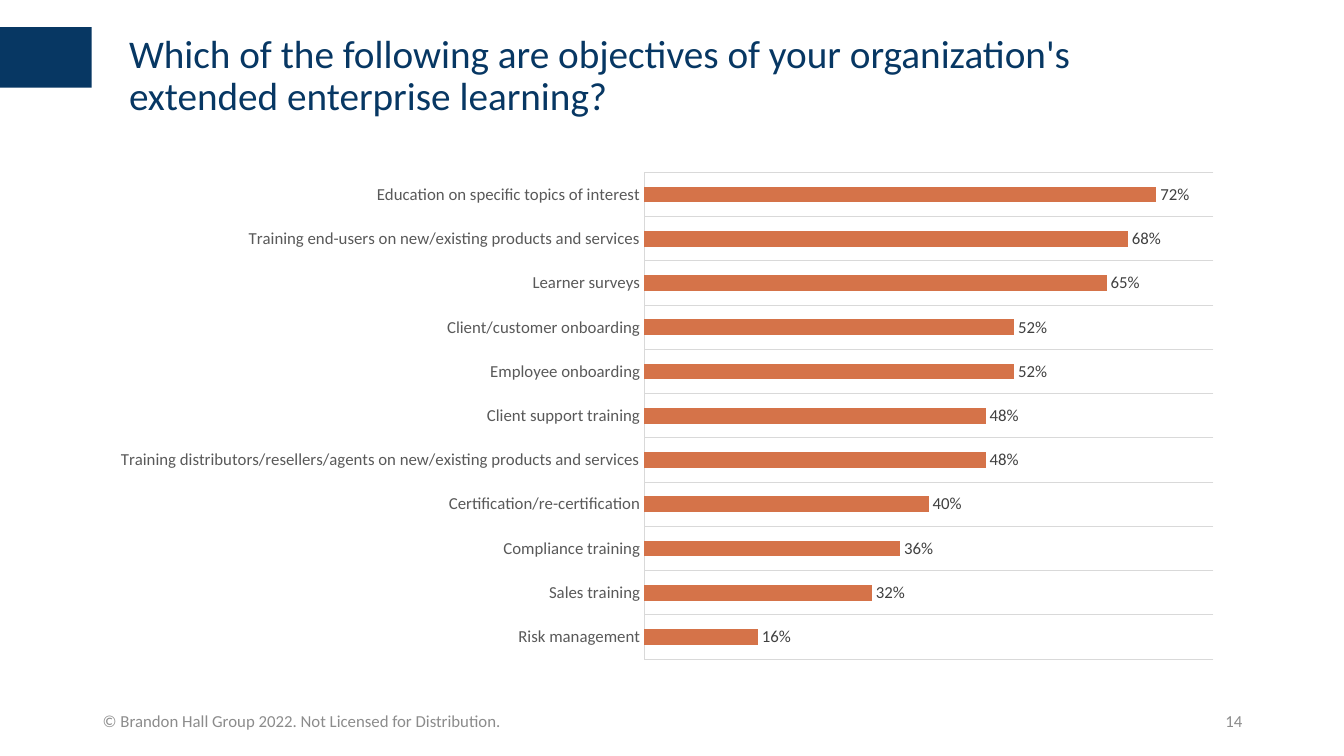
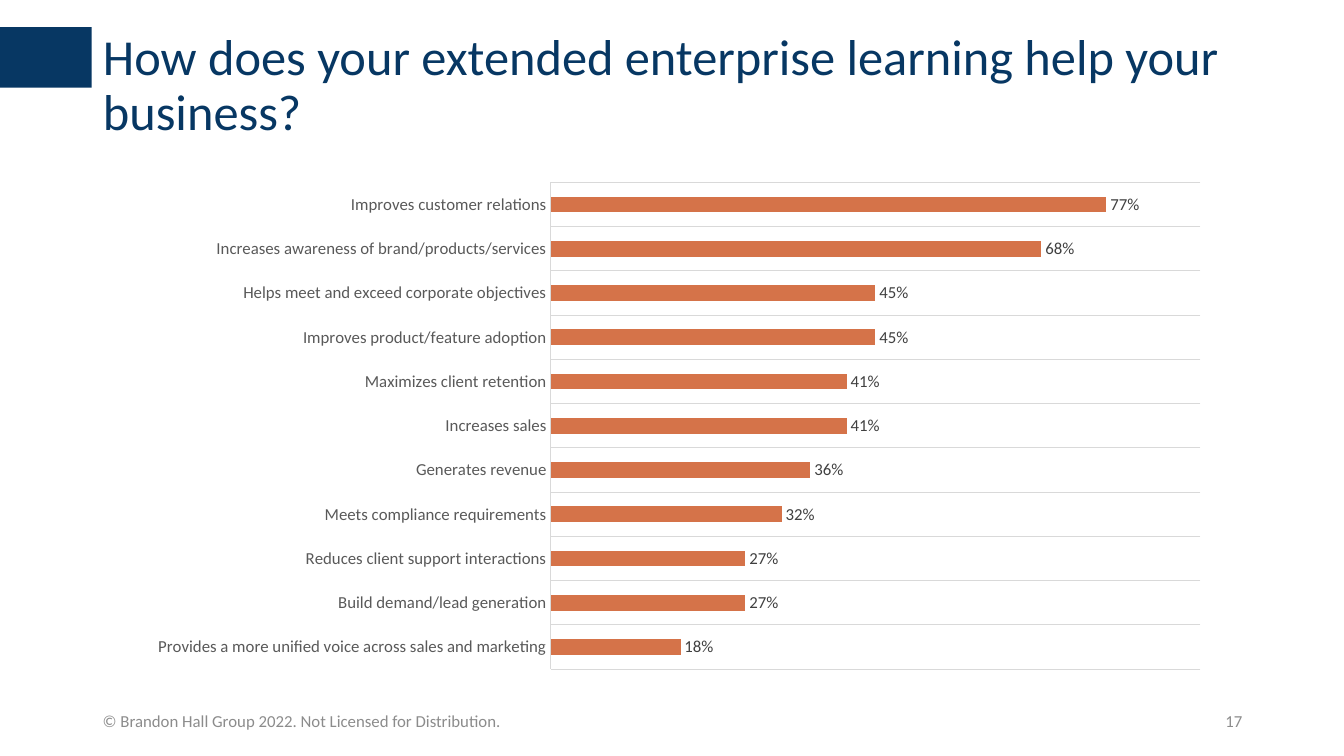
from lxml import etree
from pptx import Presentation
from pptx import util as u
from pptx.chart.data import CategoryChartData
from pptx.dml.color import RGBColor
from pptx.enum import chart as charts, shapes, text

FONT = "Calibri"
NAVY, ORANGE, GRID = "073763", "D57349", "D9D9D9"
FOOTER_GREY, AXIS_GREY, LABEL_GREY = "8C8C8C", "595959", "404040"
COPYRIGHT = "© Brandon Hall Group 2022. Not Licensed for Distribution."
CHART_NS = "http://schemas.openxmlformats.org/drawingml/2006/chart"

# Each slide: number, title, chart and plot area; answers run from the bottom bar up
SURVEYS = [
    dict(
        number=14,
        title="Which of the following are objectives of your organization's "
              "extended enterprise learning?",
        title_size=28,
        title_box=(1.18, 0.29, 10.01, 1.07),
        chart_box=(0.97, 1.61, 11.29, 5.03),
        plot=(0.48, 0.02, 0.5, 0.96),
        axis_max=0.8,
        answers=[
            ("Risk management", 0.16),
            ("Sales training", 0.32),
            ("Compliance training", 0.36),
            ("Certification/re-certification", 0.40),
            ("Training distributors/resellers/agents on new/existing "
             "products and services", 0.48),
            ("Client support training", 0.48),
            ("Employee onboarding", 0.52),
            ("Client/customer onboarding", 0.52),
            ("Learner surveys", 0.65),
            ("Training end-users on new/existing products and services", 0.68),
            ("Education on specific topics of interest", 0.72),
        ],
    ),
    dict(
        number=17,
        title="How does your extended enterprise learning help your business?",
        title_size=36,
        title_box=(0.92, 0.27, 11.5, 1.58),
        chart_box=(1.38, 1.71, 10.74, 5.03),
        plot=(0.38, 0.02, 0.6, 0.96),
        axis_max=0.9,
        answers=[
            ("Provides a more unified voice across sales and marketing", 0.18),
            ("Build demand/lead generation", 0.27),
            ("Reduces client support interactions", 0.27),
            ("Meets compliance requirements", 0.32),
            ("Generates revenue", 0.36),
            ("Increases sales", 0.41),
            ("Maximizes client retention", 0.41),
            ("Improves product/feature adoption", 0.45),
            ("Helps meet and exceed corporate objectives", 0.45),
            ("Increases awareness of brand/products/services", 0.68),
            ("Improves customer relations", 0.77),
        ],
    ),
]


def color(value):
    return RGBColor.from_string(value)


def inches(box):
    return [u.Inches(length) for length in box]


def style_font(font, size, value):
    font.name = FONT
    font.size = u.Pt(size)
    font.color.rgb = color(value)


def style_line(line):
    line.color.rgb = color(GRID)
    line.width = u.Pt(0.75)


def write(shape, words, size, value, align, anchor):
    """Fill a text shape with one styled paragraph."""
    frame = shape.text_frame
    frame.word_wrap = True
    frame.auto_size = text.MSO_AUTO_SIZE.NONE
    frame.vertical_anchor = anchor
    para = frame.paragraphs[0]
    para.alignment = align
    span = para.add_run()
    span.text = words
    style_font(span.font, size, value)
    return para


def add_band(page, box):
    band = page.shapes.add_shape(shapes.MSO_SHAPE.RECTANGLE, *inches(box))
    band.shadow.inherit = False
    band.fill.solid()
    band.fill.fore_color.rgb = color(NAVY)
    band.line.fill.background()


def add_title(page, box, words, size):
    title = page.shapes.title
    title.left, title.top, title.width, title.height = inches(box)
    para = write(title, words, size, NAVY,
                 text.PP_ALIGN.LEFT, text.MSO_ANCHOR.TOP)
    para.line_spacing = 0.9


def add_footer(page, box, number):
    """Copyright at the left end of the box, page number at the right."""
    left, top, width, height = box
    parts = [
        (left, 4.5, COPYRIGHT, text.PP_ALIGN.LEFT),
        (left + width - 3, 3, str(number), text.PP_ALIGN.RIGHT),
    ]
    for part_left, part_width, words, align in parts:
        part = page.shapes.add_textbox(
            *inches((part_left, top, part_width, height)))
        write(part, words, 12, FOOTER_GREY, align, text.MSO_ANCHOR.MIDDLE)


def set_plot_area(chart, plot):
    """Place the inner plot area as fractions of the chart."""
    area = chart.element.find(f".//{{{CHART_NS}}}plotArea")
    for old in area.findall(f"{{{CHART_NS}}}layout"):
        area.remove(old)
    layout = etree.Element(f"{{{CHART_NS}}}layout")
    manual = etree.SubElement(layout, f"{{{CHART_NS}}}manualLayout")
    settings = [("layoutTarget", "inner"), ("xMode", "edge"), ("yMode", "edge")]
    settings += zip("xywh", plot)
    for name, value in settings:
        etree.SubElement(manual, f"{{{CHART_NS}}}{name}").set("val", str(value))
    area.insert(0, layout)


def add_bar_chart(page, box, plot, axis_max, answers):
    data = CategoryChartData(number_format="0%")
    data.categories = [answer for answer, share in answers]
    data.add_series("Series 1", [share for answer, share in answers])
    chart = page.shapes.add_chart(
        charts.XL_CHART_TYPE.BAR_CLUSTERED, *inches(box), data).chart
    chart.has_legend = False
    chart.has_title = False
    style_font(chart.font, 10, "000000")
    set_plot_area(chart, plot)

    # Axes
    names = chart.category_axis
    names.major_tick_mark = charts.XL_TICK_MARK.NONE
    names.minor_tick_mark = charts.XL_TICK_MARK.NONE
    names.has_major_gridlines = True
    style_line(names.major_gridlines.format.line)
    style_line(names.format.line)
    style_font(names.tick_labels.font, 12, AXIS_GREY)
    shares = chart.value_axis
    shares.minimum_scale, shares.maximum_scale = 0, axis_max
    shares.has_major_gridlines = False
    shares.visible = False

    # Bars and their labels
    bars = chart.plots[0]
    bars.gap_width = 182
    bars.vary_by_categories = False
    fill = bars.series[0].format.fill
    fill.solid()
    fill.fore_color.rgb = color(ORANGE)
    bars.has_data_labels = True
    labels = bars.data_labels
    labels.show_value = True
    labels.number_format = "0%"
    labels.number_format_is_linked = False
    labels.position = charts.XL_LABEL_POSITION.OUTSIDE_END
    style_font(labels.font, 12, LABEL_GREY)


def add_survey_slide(deck, survey):
    page = deck.slides.add_slide(deck.slide_layouts[5])
    add_band(page, (0, 0.27, 0.91, 0.6))
    add_footer(page, (0.92, 6.95, 11.5, 0.4), survey["number"])
    add_title(page, survey["title_box"], survey["title"], survey["title_size"])
    add_bar_chart(page, survey["chart_box"], survey["plot"],
                  survey["axis_max"], survey["answers"])


def main():
    deck = Presentation()
    deck.slide_width, deck.slide_height = inches((13.33, 7.5))
    for survey in SURVEYS:
        add_survey_slide(deck, survey)
    deck.save("out.pptx")


if __name__ == "__main__":
    main()
